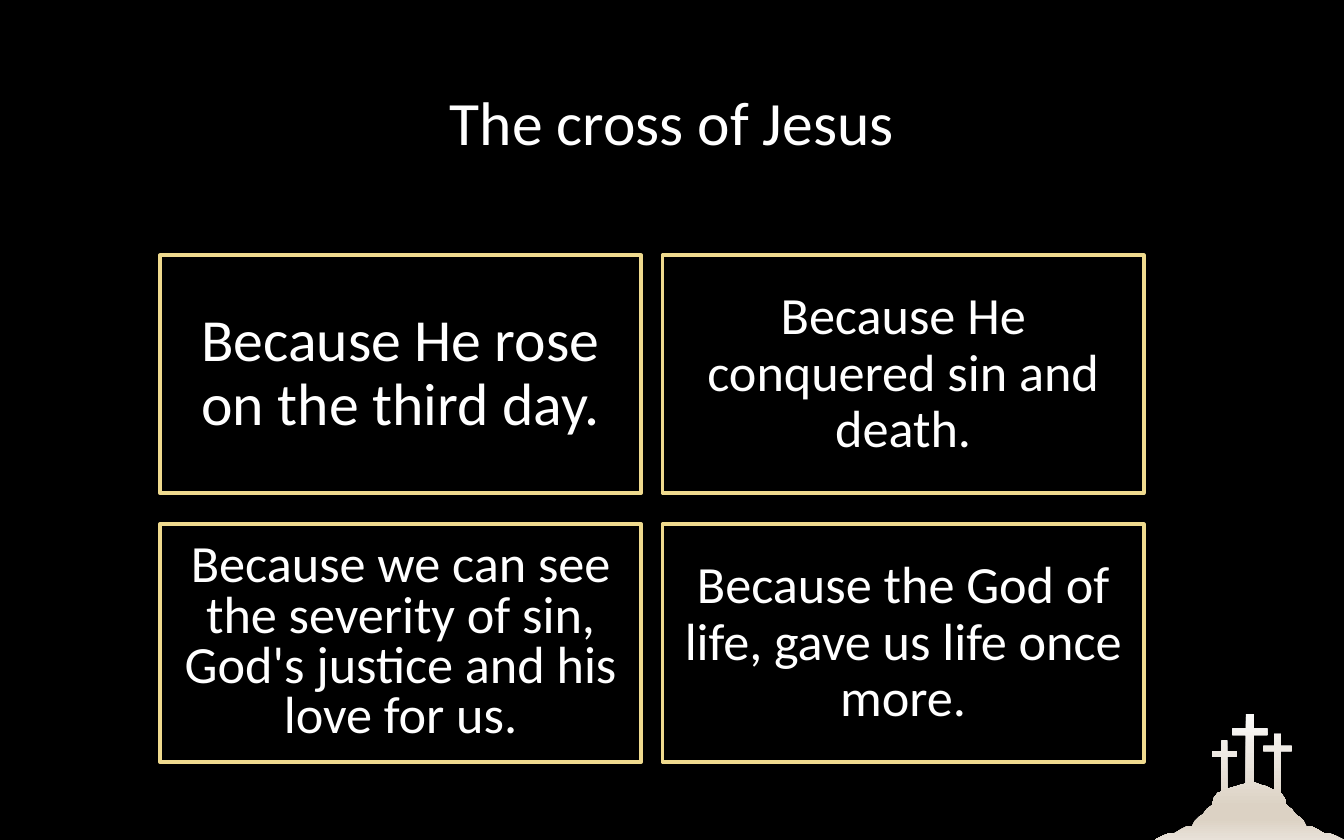
from lxml import etree
from pptx import Presentation
from pptx.dml.color import RGBColor
from pptx.enum import shapes, text
from pptx.oxml import ns
from pptx.util import Inches, Pt

COLORS = {"back": "000000", "text": "FFFFFF", "frame": "EFDA8E"}
HILL_STOPS = [(0, "FBFAF9"), (74, "DCD2C4"), (83, "DCD2C4"), (100, "E8E1D8")]
FONT = "Calibri"

# Reasons, row by row: words, size, line spacing
REASONS = [
    ("Because He rose on the third day.", 32, 0.9),
    ("Because He conquered sin and death.", 28, 0.9),
    ("Because we can see the severity of sin, God's justice and his love for us.", 28, 0.8),
    ("Because the God of life, gave us life once more.", 28, 0.9),
]

# Outline of the hill and its crosses, on a grid of 141 columns by 94 rows
HILL_GRID = 141
MIDDLE_CROSS_LEFT = [(68, 0), (68, 11), (58, 11), (58, 16), (68, 16), (68, 52)]
LEFT_CROSS = [(54, 56), (54, 32), (61, 32), (61, 28), (54, 28), (54, 20), (50, 20),
              (50, 28), (43, 28), (43, 32), (50, 32), (50, 58)]
LEFT_SLOPE = [(47, 59), (44, 63), (43, 68), (39, 71), (36, 75), (33, 77), (30, 80),
              (28, 84), (24, 84), (20, 86), (15, 89), (11, 89), (6, 91), (0, 94)]
RIGHT_SLOPE = [(HILL_GRID - x, y) for x, y in reversed(LEFT_SLOPE)]
RIGHT_CROSS = [(94, 59), (94, 28), (102, 28), (102, 24), (94, 24), (94, 15), (89, 15),
               (89, 24), (81, 24), (81, 28), (89, 28), (89, 57)]
MIDDLE_CROSS_RIGHT = [(83, 54), (79, 53), (74, 51), (74, 16), (84, 16), (84, 11),
                      (74, 11), (74, 0)]
HILL = (MIDDLE_CROSS_LEFT + [(64, 53), (61, 54)] + LEFT_CROSS + LEFT_SLOPE
        + RIGHT_SLOPE + RIGHT_CROSS + MIDDLE_CROSS_RIGHT)


def rgb(name):
    return RGBColor.from_string(COLORS[name])


def write(sp, words, size, spacing, before=0):
    tf = sp.text_frame
    tf.word_wrap = True
    tf.vertical_anchor = text.MSO_ANCHOR.MIDDLE
    p = tf.paragraphs[0]
    p.alignment = text.PP_ALIGN.CENTER
    p.line_spacing = spacing
    p.space_before = Pt(before)
    r = p.add_run()
    r.text = words
    r.font.name, r.font.size = FONT, Pt(size)
    r.font.color.rgb = rgb("text")


def add_hill(slide, x, y, w):
    builder = slide.shapes.build_freeform(*HILL[0], scale=w / HILL_GRID)
    builder.add_line_segments(HILL[1:], close=True)
    sp = builder.convert_to_shape(x, y)
    sp.left, sp.top = x, y
    sp.shadow.inherit = False
    sp.line.fill.background()
    # Vertical gradient with four stops
    sp.fill.gradient()
    grad = sp._element.spPr.find(ns.qn("a:gradFill"))
    for child in list(grad):
        grad.remove(child)
    stops = etree.SubElement(grad, ns.qn("a:gsLst"))
    for percent, color in HILL_STOPS:
        stop = etree.SubElement(stops, ns.qn("a:gs"), pos=str(percent * 1000))
        etree.SubElement(stop, ns.qn("a:srgbClr"), val=color)
    etree.SubElement(grad, ns.qn("a:lin"), ang="5400000", scaled="0")


def add_title(slide, x, y, w, h):
    write(slide.shapes.add_textbox(x, y, w, h), "The cross of Jesus", 33, 0.9)


def add_reasons(slide, x, y, w, h, gap_x, gap_y, cols=2):
    rows = len(REASONS) // cols
    box_w = (w - gap_x * (cols - 1)) // cols
    box_h = (h - gap_y * (rows - 1)) // rows
    for i, (words, size, spacing) in enumerate(REASONS):
        row, col = divmod(i, cols)
        sp = slide.shapes.add_shape(
            shapes.MSO_SHAPE.RECTANGLE,
            x + col * (box_w + gap_x), y + row * (box_h + gap_y), box_w, box_h)
        sp.shadow.inherit = False
        sp.fill.background()
        sp.line.color.rgb = rgb("frame")
        sp.line.width = Pt(2)
        write(sp, words, size, spacing, before=7.5)


def main():
    prs = Presentation()
    prs.slide_width, prs.slide_height = Inches(10), Inches(6.25)
    slide = prs.slides.add_slide(prs.slide_layouts[6])
    slide.background.fill.solid()
    slide.background.fill.fore_color.rgb = rgb("back")

    add_hill(slide, Inches(8.59), Inches(5.31), Inches(1.41))
    add_title(slide, Inches(0.69), Inches(0.33), Inches(8.62), Inches(1.21))
    add_reasons(slide, Inches(1.19), Inches(1.9), Inches(7.32), Inches(3.77),
                gap_x=Inches(0.16), gap_y=Inches(0.23))
    prs.save("out.pptx")


if __name__ == "__main__":
    main()
